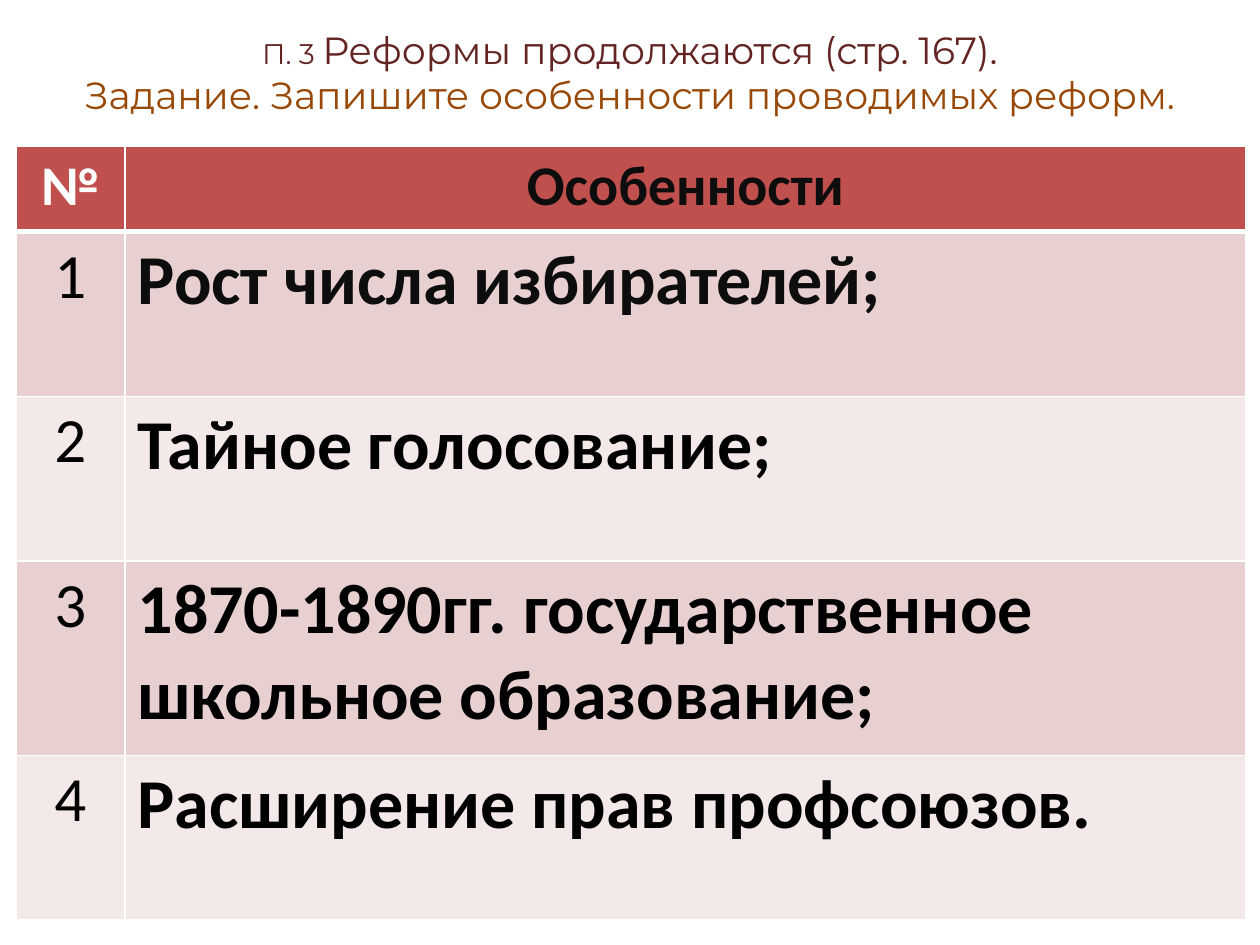
from lxml import etree
from pptx import Presentation
from pptx.dml.color import RGBColor
from pptx.enum.text import MSO_ANCHOR, PP_ALIGN
from pptx.oxml.ns import qn
from pptx.util import Cm, Pt

CENTER, LEFT = PP_ALIGN.CENTER, PP_ALIGN.LEFT
TOP = MSO_ANCHOR.TOP

WHITE = RGBColor(0xFF, 0xFF, 0xFF)
BLACK = RGBColor(0x00, 0x00, 0x00)
INK = RGBColor(0x0D, 0x0D, 0x0D)
MAROON = RGBColor(0x63, 0x25, 0x23)
BROWN = RGBColor(0x98, 0x48, 0x07)
RED = RGBColor(0xC0, 0x50, 0x4D)
BANDS = (RGBColor(0xE8, 0xD0, 0xD0), RGBColor(0xF4, 0xE9, 0xE9))

FEATURES = (
    ("Рост числа избирателей;", INK),
    ("Тайное голосование;", BLACK),
    ("1870-1890гг. государственное школьное образование;", BLACK),
    ("Расширение прав профсоюзов.", BLACK),
)


def add_text(p, text, font="Calibri", size=40, color=BLACK, bold=False, align=LEFT):
    p.alignment = align
    r = p.add_run()
    r.text = text
    r.font.name = font
    r.font.size = Pt(size)
    r.font.bold = bold
    r.font.color.rgb = color


class SlideBuilder:
    title_font = "Montserrat"
    border_color = WHITE

    def __init__(self, s):
        self.s = s

    def title(self, lines, left, top, width, height):
        tf = self.s.shapes.add_textbox(Cm(left), Cm(top), Cm(width), Cm(height)).text_frame
        tf.word_wrap = True
        tf.vertical_anchor = TOP
        tf.margin_top = tf.margin_bottom = 0
        p = tf.paragraphs[0]
        for i, line in enumerate(lines):
            if i:
                p.add_line_break()
            for text, size, color in line:
                add_text(p, text, font=self.title_font, size=size, color=color, align=CENTER)

    def table(self, left, top, widths, heights):
        frame = self.s.shapes.add_table(
            len(heights), len(widths), Cm(left), Cm(top), Cm(sum(widths)), Cm(sum(heights)))
        table = frame.table
        table.horz_banding = False
        for column, width in zip(table.columns, widths):
            column.width = Cm(width)
        for row, height in zip(table.rows, heights):
            row.height = Cm(height)
        return table

    def border(self, cell, side, width):
        tcPr = cell._tc.get_or_add_tcPr()
        ln = etree.SubElement(tcPr, qn(f"a:ln{side}"), w=str(Pt(width)))
        fill = etree.SubElement(ln, qn("a:solidFill"))
        etree.SubElement(fill, qn("a:srgbClr"), val=str(self.border_color))

    def cell(self, cell, text, fill, top_line=1, bottom_line=1, **style):
        for side, width in (("L", 1), ("R", 1), ("T", top_line), ("B", bottom_line)):
            self.border(cell, side, width)
        cell.fill.solid()
        cell.fill.fore_color.rgb = fill
        add_text(cell.text_frame.paragraphs[0], text, **style)


def main():
    prs = Presentation()
    prs.slide_width, prs.slide_height = Cm(25.4), Cm(19.05)
    slide = SlideBuilder(prs.slides.add_slide(prs.slide_layouts[6]))

    slide.title((
        (("П. 3 ", 16.2, MAROON), ("Реформы продолжаются (стр. 167).", 21.6, MAROON)),
        (("Задание. Запишите особенности проводимых реформ.", 21.6, BROWN),),
    ), 0, 0.53, 25.4, 2.79)

    table = slide.table(0.32, 2.94, (2.2, 22.6), (1.73, 3.32, 3.32, 3.92, 3.32))
    for col, (text, color) in enumerate((("№", WHITE), ("Особенности", INK))):
        slide.cell(table.cell(0, col), text, RED, bottom_line=3,
                   size=32, color=color, bold=True, align=CENTER)
    for row, (text, color) in enumerate(FEATURES, 1):
        fill = BANDS[(row - 1) % 2]
        top_line = 3 if row == 1 else 1
        slide.cell(table.cell(row, 0), str(row), fill, top_line, size=36, align=CENTER)
        slide.cell(table.cell(row, 1), text, fill, top_line, color=color, bold=True)

    prs.save("out.pptx")


if __name__ == "__main__":
    main()
